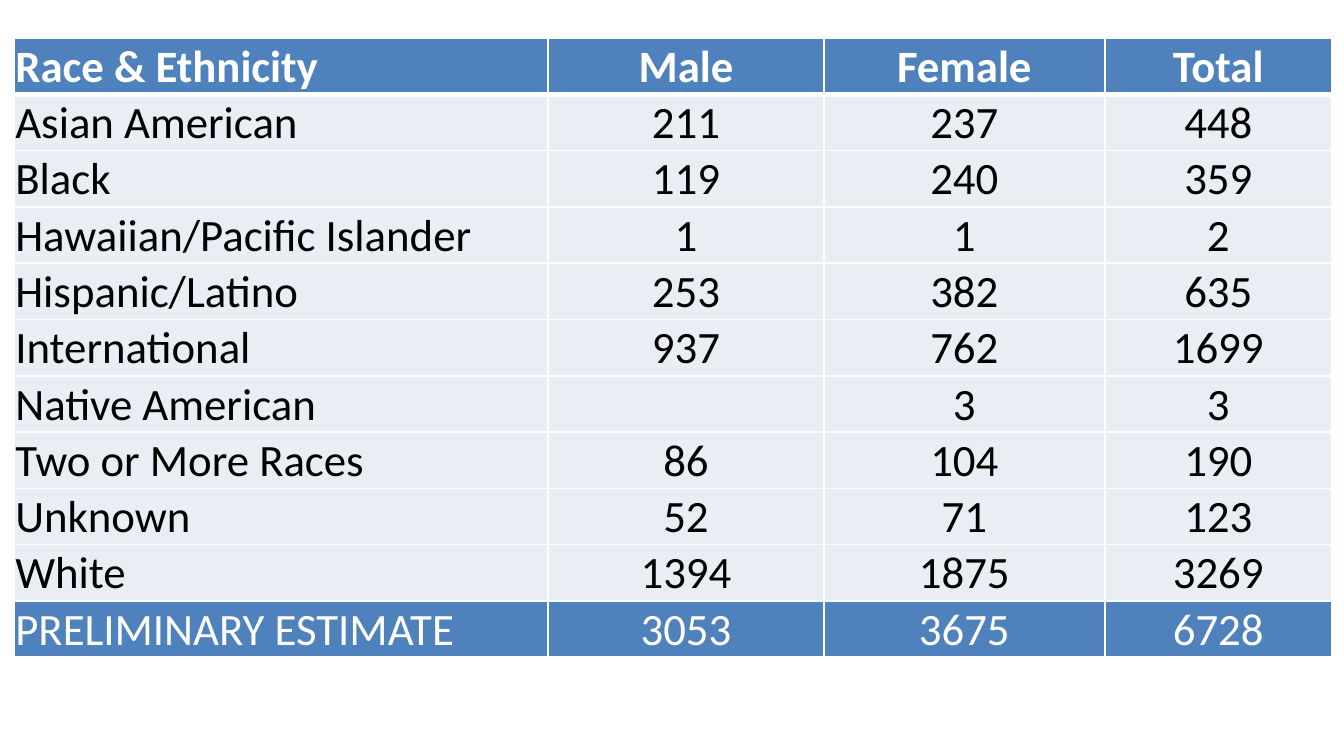
from lxml import etree
from pptx import Presentation
from pptx.dml.color import RGBColor
from pptx.enum.text import MSO_ANCHOR, PP_ALIGN
from pptx.oxml.ns import qn
from pptx.util import Cm, Pt

WHITE, BLACK, BLUE, PALE = "FFFFFF", "000000", "4F81BD", "E9EDF4"


def color(value):
    return RGBColor.from_string(value)


def add_border(cell, side, points):
    line = etree.SubElement(cell._tc.get_or_add_tcPr(), qn(f"a:ln{side}"), w=str(Pt(points)))
    fill = etree.SubElement(line, qn("a:solidFill"))
    etree.SubElement(fill, qn("a:srgbClr"), val=WHITE)


rows = [
    ("Race & Ethnicity", "Male", "Female", "Total"),
    ("Asian American", "211", "237", "448"),
    ("Black", "119", "240", "359"),
    ("Hawaiian/Pacific Islander", "1", "1", "2"),
    ("Hispanic/Latino", "253", "382", "635"),
    ("International", "937", "762", "1699"),
    ("Native American", "", "3", "3"),
    ("Two or More Races", "86", "104", "190"),
    ("Unknown", "52", "71", "123"),
    ("White", "1394", "1875", "3269"),
    ("PRELIMINARY ESTIMATE", "3053", "3675", "6728"),
]
widths = [10.1, 5.21, 5.31, 4.29]
row_height = 1.06

# Page
deck = Presentation()
deck.slide_width, deck.slide_height = Cm(25.4), Cm(14.29)
page = deck.slides.add_slide(deck.slide_layouts[6])

# Table grid
table = page.shapes.add_table(
    len(rows), len(widths), Cm(0.26), Cm(0.72), Cm(sum(widths)), Cm(row_height * len(rows))
).table
for column, width in zip(table.columns, widths):
    column.width = Cm(width)
for row in table.rows:
    row.height = Cm(row_height)

# Cells: blue heading and closing rows, pale rows between
for row_number, values in enumerate(rows):
    heading = row_number == 0
    banner = heading or row_number == len(rows) - 1
    for column_number, value in enumerate(values):
        cell = table.cell(row_number, column_number)
        cell.margin_left = cell.margin_right = cell.margin_top = Cm(0.03)
        cell.margin_bottom = Cm(0)
        cell.vertical_anchor = MSO_ANCHOR.BOTTOM

        # White rules, thicker under the heading
        add_border(cell, "L", 1)
        add_border(cell, "R", 1)
        add_border(cell, "T", 3 if row_number == 1 else 1)
        add_border(cell, "B", 3 if heading else 1)
        cell.fill.solid()
        cell.fill.fore_color.rgb = color(BLUE if banner else PALE)

        para = cell.text_frame.paragraphs[0]
        para.alignment = PP_ALIGN.CENTER if column_number else PP_ALIGN.LEFT
        if value:
            span = para.add_run()
            span.text = value
            span.font.name = "Calibri"
            span.font.size = Pt(24)
            span.font.bold = heading
            span.font.color.rgb = color(WHITE if banner else BLACK)

deck.save("out.pptx")
